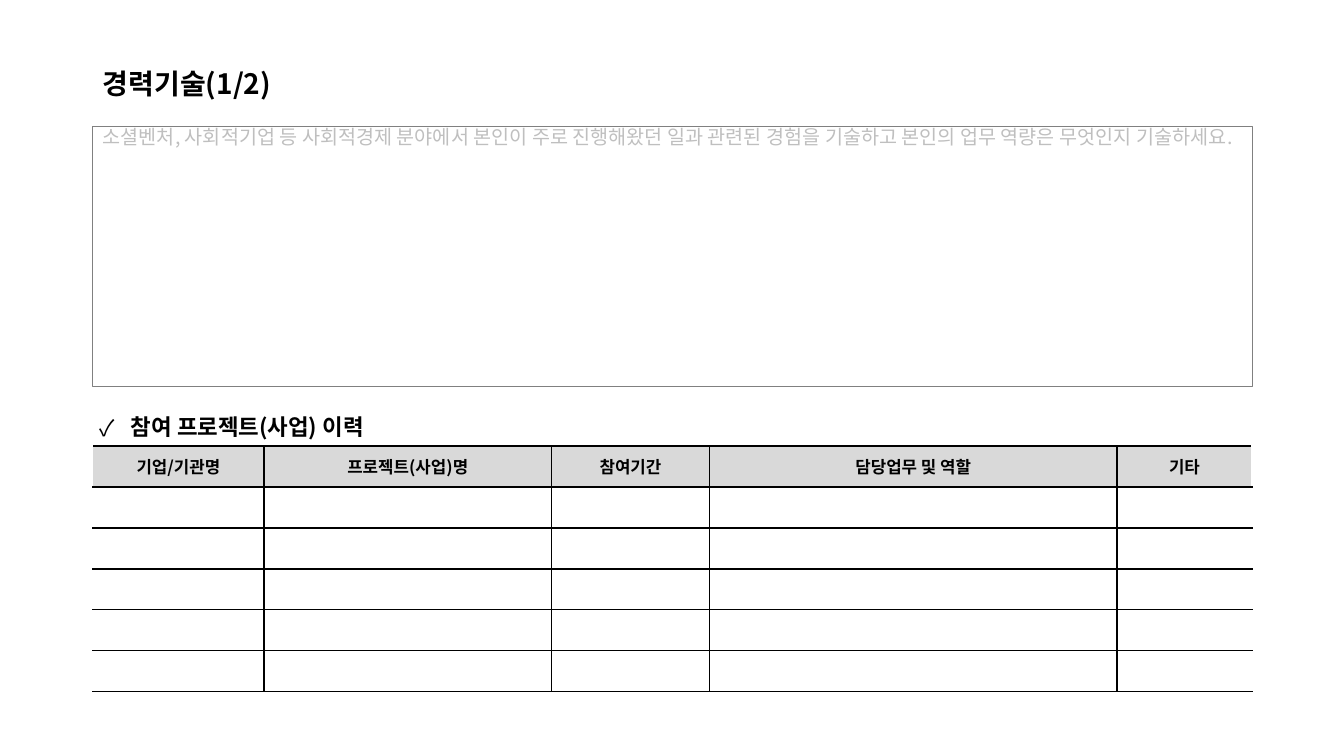
from dataclasses import dataclass

from lxml.etree import SubElement
from pptx import Presentation
from pptx.dml.color import RGBColor
from pptx.enum.text import MSO_ANCHOR as Anchor, PP_ALIGN as Align
from pptx.oxml.ns import qn
from pptx.slide import Slide
from pptx.table import _Cell as Cell
from pptx.text.text import TextFrame, _Paragraph as Para
from pptx.util import Inches, Pt

FONT = "Noto Sans CJK KR"
BLACK = RGBColor(0x00, 0x00, 0x00)
WHITE = RGBColor(0xFF, 0xFF, 0xFF)
GRAY = RGBColor(0x80, 0x80, 0x80)
HINT = RGBColor(0xBF, 0xBF, 0xBF)
SHADE = RGBColor(0xD9, 0xD9, 0xD9)

WIDE, HIGH = Inches(13.33), Inches(7.5)
LEFT, SPAN = 0.069, 0.8627  # shares of the slide's width
HEADS = ("기업/기관명", "프로젝트(사업)명", "참여기간", "담당업무 및 역할", "기타")
PARTS = (1.7, 2.85, 1.57, 4.04, 1.34)  # relative column widths
ROWS = 6
TOP, DEPTH = 0.59, 0.3253  # table, shares of the slide's height


@dataclass(frozen=True)
class Block:
    """A text area; left, top and height are shares of the slide."""
    text: str
    left: float
    top: float
    height: float
    size: int
    anchor: Anchor
    color: RGBColor = BLACK
    bold: bool = True
    lead: float = 0.9
    edge: bool = False
    mark: str = ""


BLOCKS = (
    Block("경력기술(1/2)", LEFT, 0.0533, 0.0867, 20, Anchor.BOTTOM),
    Block("소셜벤처, 사회적기업 등 사회적경제 분야에서 본인이 주로 진행해왔던 일과 "
          "관련된 경험을 기술하고 본인의 업무 역량은 무엇인지 기술하세요.",
          LEFT, 0.1667, 0.344, 14, Anchor.TOP, HINT, bold=False, lead=0.72, edge=True),
    Block("참여 프로젝트(사업) 이력", 0.0668, 0.5333, 0.0667, 16, Anchor.MIDDLE, mark="✓"),
)


def write(para: Para, text: str, size: int, color: RGBColor, bold: bool) -> None:
    run = para.add_run()
    run.text = text
    font = run.font
    font.name, font.size, font.bold = FONT, Pt(size), bold
    font.color.rgb = color
    SubElement(font._element, qn("a:ea"), typeface=FONT)


def tick(para: Para, mark: str) -> None:
    """Give the paragraph a bullet with a hanging indent."""
    props = para._p.get_or_add_pPr()
    props.set("marL", str(Inches(0.31)))
    props.set("indent", str(-Inches(0.31)))
    SubElement(props, qn("a:buFont"), typeface=FONT)
    SubElement(props, qn("a:buChar"), char=mark)


def place(slide: Slide, block: Block) -> None:
    box = slide.shapes.add_textbox(int(block.left * WIDE), int(block.top * HIGH),
                                   int(SPAN * WIDE), int(block.height * HIGH))
    if block.edge:
        box.line.color.rgb = GRAY
        box.line.width = Pt(0.75)
    frame: TextFrame = box.text_frame
    frame.word_wrap = True
    frame.vertical_anchor = block.anchor
    para = frame.paragraphs[0]
    para.line_spacing = block.lead
    if block.mark:
        tick(para, block.mark)
    write(para, block.text, block.size, block.color, block.bold)


def rule(cell: Cell, first: bool, last: bool) -> None:
    """Draw the cell's borders, white on the table's outer sides."""
    props = cell._tc.get_or_add_tcPr()
    sides = {"L": WHITE if first else BLACK, "R": WHITE if last else BLACK,
             "T": BLACK, "B": BLACK}
    for spot, (side, color) in enumerate(sides.items()):
        line = SubElement(props, qn(f"a:ln{side}"), w=str(Pt(1)))
        fill = SubElement(line, qn("a:solidFill"))
        SubElement(fill, qn("a:srgbClr"), val=str(color))
        props.insert(spot, line)


def chart_past(slide: Slide) -> None:
    """Add the table of past projects."""
    table = slide.shapes.add_table(ROWS, len(HEADS), int(LEFT * WIDE), int(TOP * HIGH),
                                   int(SPAN * WIDE), int(DEPTH * HIGH)).table
    table.first_row = table.horz_banding = False
    for col, part in zip(table.columns, PARTS):
        col.width = int(SPAN * WIDE * part / sum(PARTS))
    for y, row in enumerate(table.rows):
        row.height = int(DEPTH * HIGH / ROWS)
        for x, cell in enumerate(row.cells):
            cell.vertical_anchor = Anchor.MIDDLE
            cell.fill.solid()
            cell.fill.fore_color.rgb = WHITE if y else SHADE
            rule(cell, x == 0, x == len(HEADS) - 1)
            para = cell.text_frame.paragraphs[0]
            para.alignment = Align.CENTER
            if y == 0:
                write(para, HEADS[x], 12, BLACK, True)
            else:
                SubElement(para._p, qn("a:endParaRPr"), sz="1200")


def main() -> None:
    deck = Presentation()
    deck.slide_width, deck.slide_height = WIDE, HIGH
    slide = deck.slides.add_slide(deck.slide_layouts[6])
    chart_past(slide)
    for block in BLOCKS:
        place(slide, block)
    deck.save("out.pptx")


if __name__ == "__main__":
    main()
